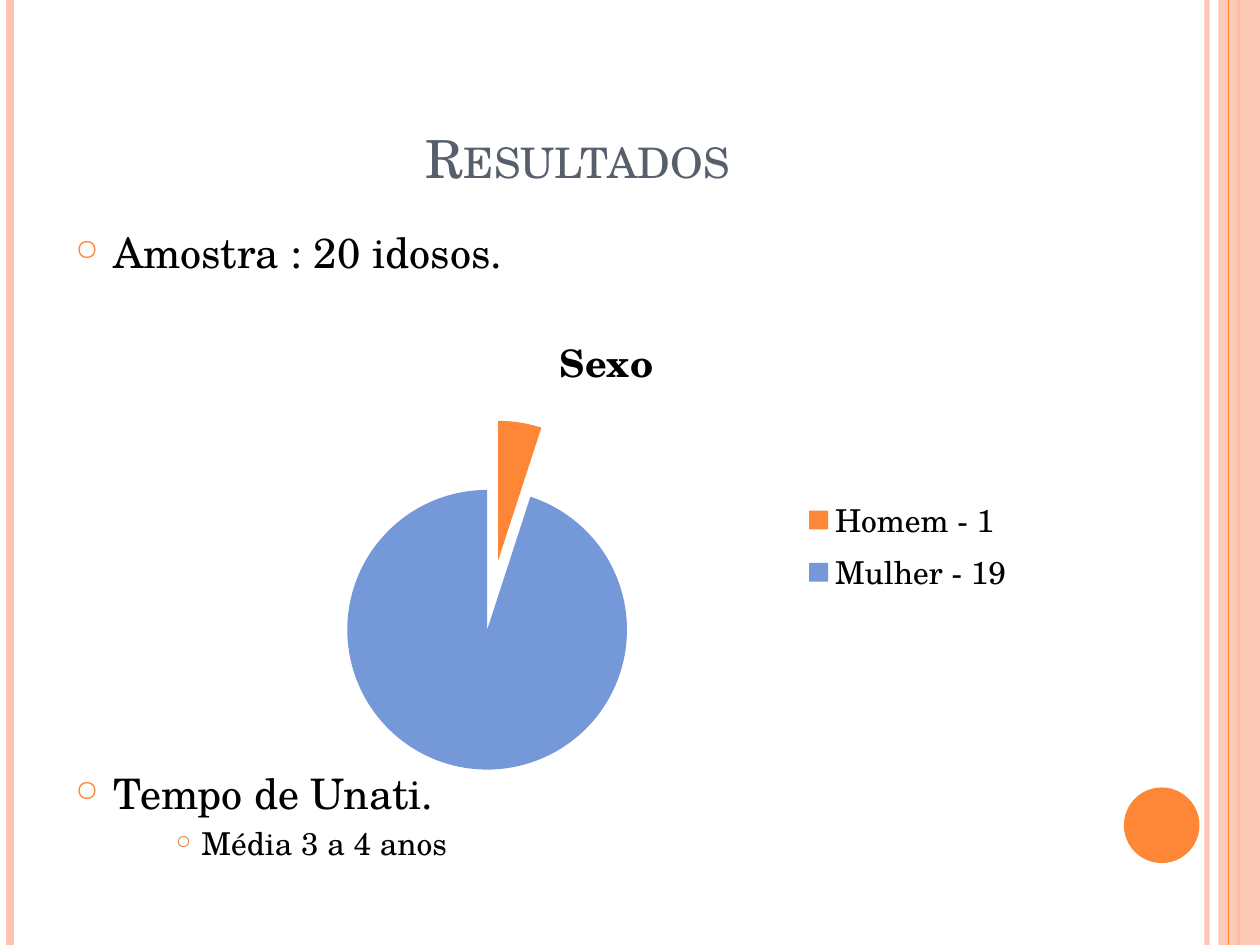
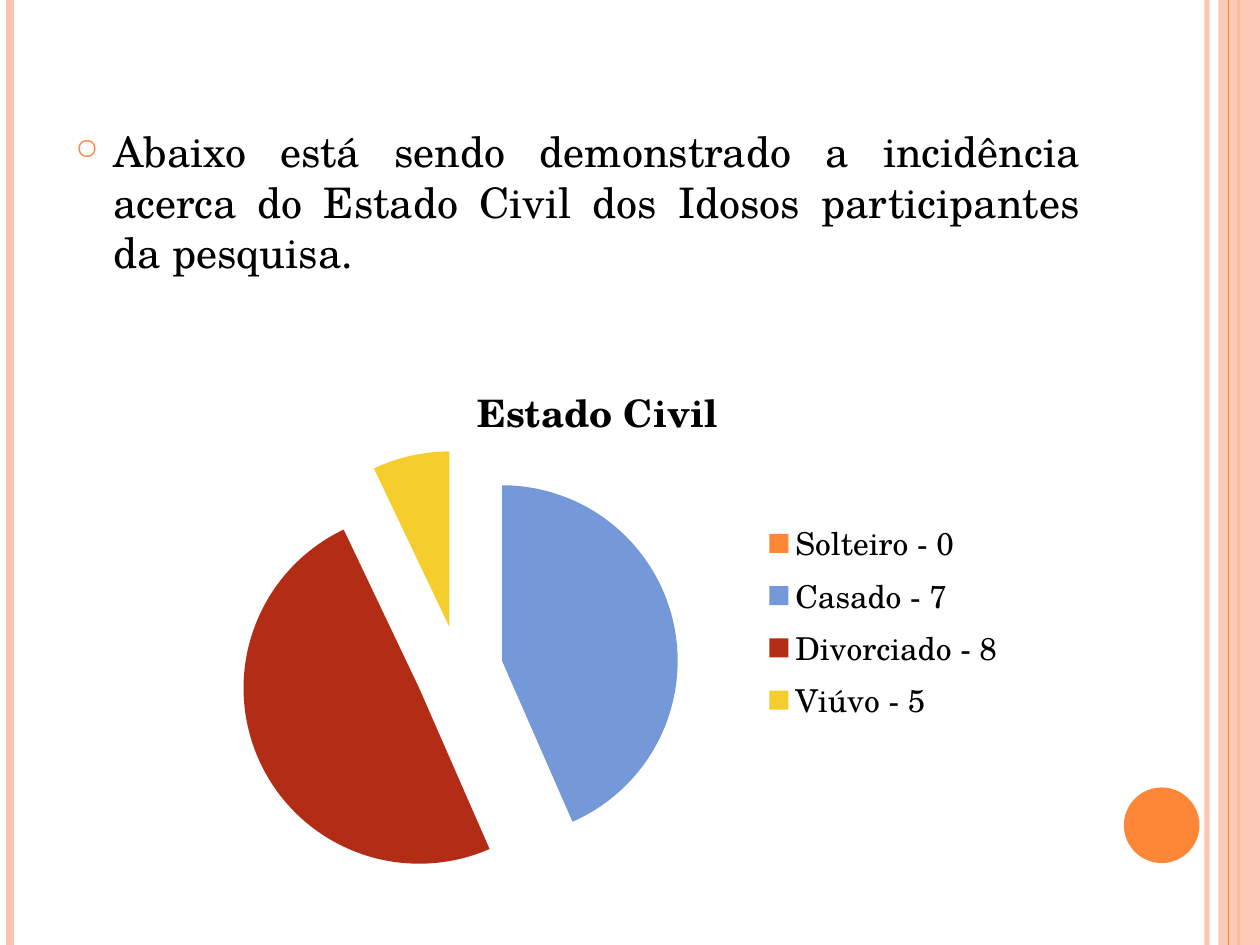
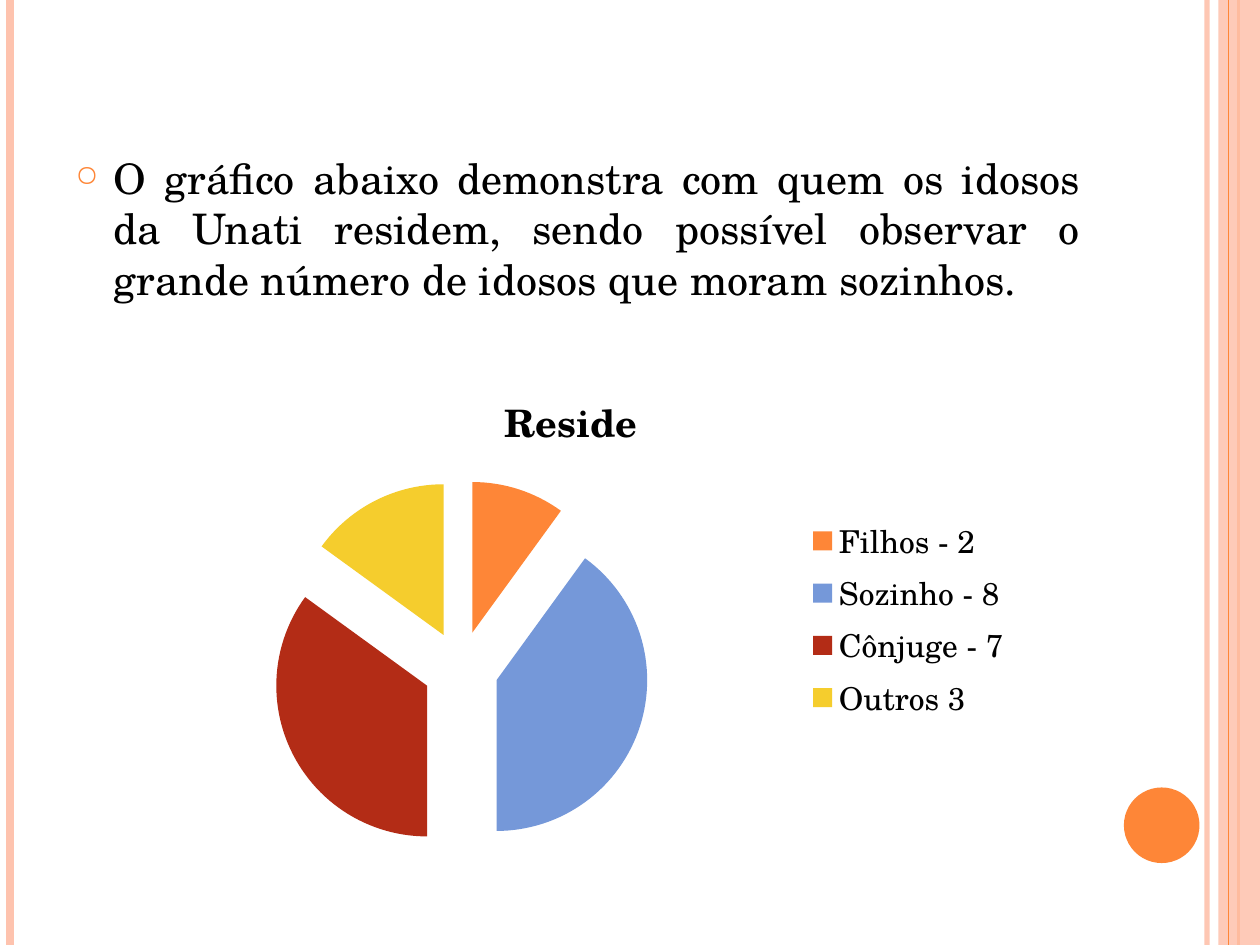
from lxml import etree
from pptx import Presentation
from pptx import util as u
from pptx.chart.data import CategoryChartData
from pptx.dml.color import RGBColor
from pptx.enum import chart as charts, shapes, text
from pptx.oxml.ns import qn

FONT = "TeX Gyre Schola"
COLORS = {
    "band": "FEC3AE", "accent": "FE8637", "sub_bullet": "E07631",
    "title": "575F6D", "text": "000000",
    "blue": "7598D9", "red": "B32C16", "yellow": "F5CD2D",
}
SLICES = ["accent", "blue", "red", "yellow"]
TITLE_ONLY, BLANK = 5, 6

# x position, colour, width in points, opacity in percent
RULES = [
    (9.58, "band", 3, 93),
    (0.08, "band", 4.5, 100),
    (9.83, "accent", 1.5, 100),
    (9.75, "accent", 0.75, 100),
]
# size, left margin, hanging indent, space before, bullet colour, bullet percent
LEVELS = {
    1: (24, 0.3, 0.3, 6, "accent", 70),
    2: (18, 1, 0.2, 3.6, "sub_bullet", 60),
}


def rgb(name):
    return RGBColor.from_string(COLORS[name])


def inches(box):
    return [u.Inches(length) for length in box]


def add_child(parent, tag, **attributes):
    return etree.SubElement(parent, qn(tag), attributes)


def set_opacity(shape, percent):
    if percent < 100:
        color = next(shape.element.iter(qn("a:srgbClr")))
        add_child(color, "a:alpha", val=str(percent * 1000))


def style_font(font, size, color="text", bold=False):
    font.name = FONT
    font.size = u.Pt(size)
    font.bold = bold
    font.color.rgb = rgb(color)


def add_rule(page, x, color, width, opacity):
    rule = page.shapes.add_connector(
        shapes.MSO_CONNECTOR.STRAIGHT, *inches((x, 0, x, 7.5)))
    rule.line.color.rgb = rgb(color)
    rule.line.width = u.Pt(width)
    set_opacity(rule, opacity)
    add_child(rule.element.spPr, "a:effectLst")


def add_plain_shape(page, kind, box, color, opacity=100):
    shape = page.shapes.add_shape(kind, *inches(box))
    shape.shadow.inherit = False
    shape.fill.solid()
    shape.fill.fore_color.rgb = rgb(color)
    shape.line.fill.background()
    set_opacity(shape, opacity)


def add_frame(page):
    """Draw the side bands and the disc that every slide shares."""
    *rules, inner_rule = RULES
    for rule in rules:
        add_rule(page, *rule)
    add_plain_shape(page, shapes.MSO_SHAPE.RECTANGLE,
                    (9.67, 0, 0.33, 7.5), "band", 87)
    add_rule(page, *inner_rule)
    add_plain_shape(page, shapes.MSO_SHAPE.OVAL,
                    (8.92, 6.25, 0.6, 0.6), "accent")


def add_page(deck, layout):
    page = deck.slides.add_slide(deck.slide_layouts[layout])
    add_frame(page)
    return page


def set_title(page, box, words):
    title = page.shapes.title
    title.left, title.top, title.width, title.height = inches(box)
    frame = title.text_frame
    frame.auto_size = text.MSO_AUTO_SIZE.NONE
    frame.vertical_anchor = text.MSO_ANCHOR.BOTTOM
    para = frame.paragraphs[0]
    para.alignment = text.PP_ALIGN.CENTER
    span = para.add_run()
    span.text = words
    style_font(span.font, 30, "title")
    span._r.get_or_add_rPr().set("cap", "small")


def add_bullets(page, box, items, align=text.PP_ALIGN.LEFT):
    """Write (level, words) items as a bulleted list."""
    frame = page.shapes.add_textbox(*inches(box)).text_frame
    frame.word_wrap = True
    for index, (level, words) in enumerate(items):
        size, margin, hanging, before, color, percent = LEVELS[level]
        para = frame.add_paragraph() if index else frame.paragraphs[0]
        para.alignment = align
        para.space_before = u.Pt(before)
        props = para._p.get_or_add_pPr()
        props.set("marL", str(u.Inches(margin)))
        props.set("indent", str(-u.Inches(hanging)))
        add_child(add_child(props, "a:buClr"), "a:srgbClr", val=COLORS[color])
        add_child(props, "a:buSzPct", val=str(percent * 1000))
        add_child(props, "a:buChar", char="○")
        span = para.add_run()
        span.text = words
        style_font(span.font, size)


def set_plot_area(chart, plot):
    """Fix the inner plot area, given as fractions of the chart."""
    area = next(chart.element.iter(qn("c:plotArea")))
    for old in area.findall(qn("c:layout")):
        area.remove(old)
    layout = etree.Element(qn("c:layout"))
    area.insert(0, layout)
    manual = add_child(layout, "c:manualLayout")
    add_child(manual, "c:layoutTarget", val="inner")
    for axis in "xy":
        add_child(manual, f"c:{axis}Mode", val="edge")
    for key, value in zip("xywh", plot):
        add_child(manual, f"c:{key}", val=str(value))


def add_pie(page, box, name, values, plot=None):
    data = CategoryChartData()
    data.categories = list(values)
    data.add_series(name, list(values.values()))
    chart = page.shapes.add_chart(
        charts.XL_CHART_TYPE.PIE_EXPLODED, *inches(box), data).chart
    style_font(chart.font, 18)
    chart.has_title = True
    span = chart.chart_title.text_frame.paragraphs[0].add_run()
    span.text = name
    style_font(span.font, 21.6, bold=True)
    chart.chart_title.include_in_layout = False
    chart.has_legend = True
    chart.legend.position = charts.XL_LEGEND_POSITION.RIGHT
    chart.legend.include_in_layout = False
    pie = chart.plots[0]
    pie.vary_by_categories = True
    for index, color in enumerate(SLICES[:len(values)]):
        fill = pie.series[0].points[index].format.fill
        fill.solid()
        fill.fore_color.rgb = rgb(color)
    if plot:
        set_plot_area(chart, plot)


def add_results_page(deck):
    page = add_page(deck, TITLE_ONLY)
    set_title(page, (0.5, 0.3, 8.17, 1.25), "Resultados")
    add_bullets(page, (0.5, 1.75, 8.17, 0.5), [(1, "Amostra : 20 idosos.")])
    add_bullets(page, (0.5, 6.04, 8.17, 0.9),
                [(1, "Tempo de Unati."), (2, "Média 3 a 4 anos")])
    add_pie(page, (1.48, 2.42, 6.67, 3.83), "Sexo",
            {"Homem - 1": 5, "Mulher - 19": 95})


def add_chart_page(deck, top, words, box, name, values, plot=None):
    """Add a slide with one justified bullet above a pie."""
    page = add_page(deck, BLANK)
    add_bullets(page, (0.5, top, 8.17, 1.3), [(1, words)],
                text.PP_ALIGN.JUSTIFY)
    add_pie(page, box, name, values, plot)


def main():
    deck = Presentation()
    deck.slide_width, deck.slide_height = inches((10, 7.5))
    add_results_page(deck)
    add_chart_page(
        deck, 0.95,
        "Abaixo está sendo demonstrado a incidência acerca do Estado Civil "
        "dos Idosos participantes da pesquisa.",
        (1.41, 2.81, 6.67, 4.25), "Estado Civil",
        {"Solteiro - 0": 0, "Casado - 7": 43, "Divorciado - 8": 49,
         "Viúvo - 5": 7},
        plot=(0.06, 0.18, 0.55, 0.82))
    add_chart_page(
        deck, 1.16,
        "O gráfico abaixo demonstra com quem os idosos da Unati residem, "
        "sendo possível observar o grande número de idosos que moram "
        "sozinhos.",
        (0.94, 2.89, 7.19, 4.05), "Reside",
        {"Filhos - 2": 10, "Sozinho - 8": 40, "Cônjuge - 7": 35,
         "Outros 3": 15})
    deck.save("out.pptx")


if __name__ == "__main__":
    main()
